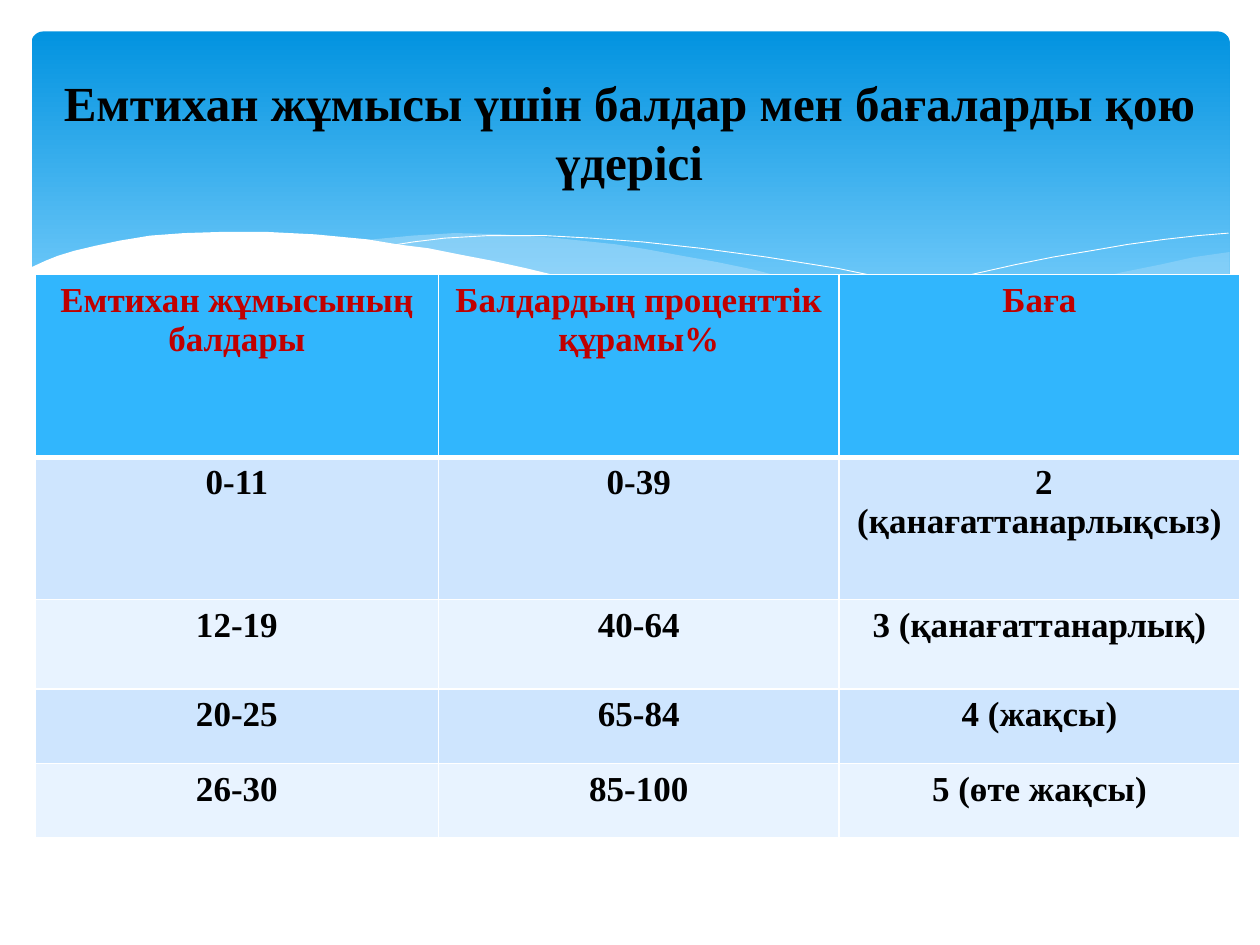
from lxml import etree
from pptx import Presentation
from pptx.dml.color import RGBColor
from pptx.enum.shapes import MSO_SHAPE
from pptx.enum.text import MSO_ANCHOR, PP_ALIGN
from pptx.oxml.ns import qn
from pptx.util import Inches, Pt

ROUNDED = MSO_SHAPE.ROUNDED_RECTANGLE
CENTER = PP_ALIGN.CENTER
MIDDLE = MSO_ANCHOR.MIDDLE

THEME = {
    "font": "Times New Roman",
    "title_size": 28,
    "table_size": 20,
    "text": "000000",
    "header_text": "C00000",
    "header_fill": "31B6FD",
    "bands": ("CEE5FE", "E8F3FF"),
    "banner": (("0293E0", 0), ("83D3FE", 0.9)),
    "wave": "C6E7FC",
    "white": "FFFFFF",
}

TITLE = "Емтихан жұмысы үшін балдар мен бағаларды қою үдерісі"
GRADES = [
    ("Емтихан жұмысының балдары", "Балдардың проценттік құрамы%", "Баға"),
    ("0-11", "0-39", " 2 (қанағаттанарлықсыз)"),
    ("12-19", "40-64", "3 (қанағаттанарлық)"),
    ("20-25", "65-84", "4 (жақсы)"),
    ("26-30", "85-100", "5 (өте жақсы)"),
]
COLUMN_WIDTHS = (3.2, 3.18, 3.18)
ROW_HEIGHTS = (1.45, 1.13, 0.71, 0.59, 0.59)

RIGHT_WAVE = [
    (9.76, 2), (9.48, 2.04), (9.21, 2.1), (8.91, 2.16), (8.61, 2.23), (8.05, 2.37),
    (7.53, 2.48), (7.06, 2.57), (6.61, 2.65), (6.91, 2.69), (7.19, 2.72), (7.45, 2.75),
    (7.69, 2.77), (8.03, 2.78), (8.35, 2.77), (8.63, 2.75), (8.89, 2.72), (9.13, 2.67),
    (9.35, 2.62), (9.63, 2.52), (9.76, 2.47),
]
MIDDLE_WAVE = [
    (8.93, 2.73), (8.66, 2.69), (8.07, 2.6), (7.41, 2.47), (6.68, 2.31), (6.29, 2.22),
    (5.98, 2.14), (5.69, 2.08), (5.41, 2.03), (5.14, 1.98), (4.89, 1.94), (4.42, 1.89),
    (3.99, 1.86), (3.61, 1.85), (3.28, 1.87), (2.86, 1.91), (3.23, 1.96), (3.62, 2.03),
    (4.04, 2.11), (4.49, 2.22), (4.91, 2.32), (5.66, 2.48), (6.34, 2.61), (6.95, 2.7),
    (7.48, 2.76), (7.96, 2.78), (8.38, 2.78), (8.67, 2.76),
]
LEFT_CREST = [
    (3.09, 1.95), (3.28, 1.92), (3.53, 1.89), (3.87, 1.87), (4.33, 1.87), (4.69, 1.89),
    (5.1, 1.92), (5.56, 1.97), (6.08, 2.04), (6.65, 2.13), (7.27, 2.26), (7.95, 2.41),
    (8.69, 2.61), (9.07, 2.72),
]
RIGHT_CREST = [
    (6.13, 2.57), (6.53, 2.46), (6.95, 2.35), (7.48, 2.23), (8.06, 2.1), (8.36, 2.04),
    (8.66, 1.99), (8.95, 1.94), (9.24, 1.9), (9.51, 1.87), (9.75, 1.85),
]
FRONT_WAVE = [
    (9.77, 2.46), (9.5, 2.56), (9.2, 2.65), (8.87, 2.71), (8.5, 2.75), (8.09, 2.77),
    (7.61, 2.75), (7.08, 2.7), (6.48, 2.62), (5.79, 2.5), (5.03, 2.33), (4.47, 2.2),
    (4.18, 2.13), (3.91, 2.07), (3.65, 2.02), (3.4, 1.97), (3.16, 1.94), (2.92, 1.9),
    (2.71, 1.88), (2.5, 1.86), (2.11, 1.84), (1.77, 1.84), (1.46, 1.85), (1.19, 1.87),
    (0.95, 1.91), (0.76, 1.95), (0.59, 1.99), (0.46, 2.03), (0.36, 2.07), (0.23, 2.13),
    (0.23, 3.29), (9.77, 3.29),
]


def color(name):
    return RGBColor.from_string(name)


def write(frame, text, size, ink):
    frame.word_wrap = True
    paragraph = frame.paragraphs[0]
    paragraph.alignment = CENTER
    run = paragraph.add_run()
    run.text = text
    run.font.name = THEME["font"]
    run.font.size = Pt(size)
    run.font.bold = True
    run.font.color.rgb = color(ink)


def add_banner(slide):
    banner = slide.shapes.add_shape(
        ROUNDED, Inches(0.25), Inches(0.25), Inches(9.51), Inches(2.7))
    banner.adjustments[0] = 0.034
    banner.shadow.inherit = False
    banner.line.fill.background()
    banner.fill.gradient()
    banner.fill.gradient_angle = 270
    for stop, (shade, position) in zip(banner.fill.gradient_stops, THEME["banner"]):
        stop.color.rgb = color(shade)
        stop.position = position


def add_curve(slide, points, closed):
    corners = [(Inches(x), Inches(y)) for x, y in points]
    builder = slide.shapes.build_freeform(*corners[0])
    builder.add_line_segments(corners[1:], close=closed)
    curve = builder.convert_to_shape()
    curve.shadow.inherit = False
    return curve


def add_wave(slide, points, shade, opacity=100):
    wave = add_curve(slide, points, True)
    wave.line.fill.background()
    wave.fill.solid()
    wave.fill.fore_color.rgb = color(shade)
    if opacity < 100:
        tint = wave.fill._xPr.find(".//" + qn("a:srgbClr"))
        etree.SubElement(tint, qn("a:alpha"), val=str(opacity * 1000))


def add_crest(slide, points):
    crest = add_curve(slide, points, False)
    crest.fill.background()
    crest.line.color.rgb = color(THEME["white"])
    crest.line.width = Pt(0.5)


def add_borders(cell, widths):
    properties = cell._tc.get_or_add_tcPr()
    for side, width in widths.items():
        border = etree.SubElement(properties, qn("a:ln" + side), w=str(Pt(width)))
        fill = etree.SubElement(border, qn("a:solidFill"))
        etree.SubElement(fill, qn("a:srgbClr"), val=THEME["white"])


def add_grades(slide):
    grades = slide.shapes.add_table(
        len(GRADES), len(COLUMN_WIDTHS), Inches(0.28), Inches(2.18),
        Inches(sum(COLUMN_WIDTHS)), Inches(sum(ROW_HEIGHTS))).table
    for column, width in zip(grades.columns, COLUMN_WIDTHS):
        column.width = Inches(width)
    for index, (row, height) in enumerate(zip(grades.rows, ROW_HEIGHTS)):
        row.height = Inches(height)
        header = index == 0
        fill = THEME["header_fill"] if header else THEME["bands"][(index - 1) % 2]
        ink = THEME["header_text"] if header else THEME["text"]
        borders = {"L": 1, "R": 1, "T": 3 if index == 1 else 1, "B": 3 if header else 1}
        for cell, text in zip(row.cells, GRADES[index]):
            add_borders(cell, borders)
            cell.fill.solid()
            cell.fill.fore_color.rgb = color(fill)
            write(cell.text_frame, text, THEME["table_size"], ink)


def main():
    """Build the slide of exam points and grades."""
    deck = Presentation()
    deck.slide_width, deck.slide_height = Inches(10), Inches(7.5)
    slide = deck.slides.add_slide(deck.slide_layouts[6])
    add_banner(slide)
    add_wave(slide, RIGHT_WAVE, THEME["wave"], 29)
    add_wave(slide, MIDDLE_WAVE, THEME["wave"], 40)
    add_crest(slide, LEFT_CREST)
    add_crest(slide, RIGHT_CREST)
    add_wave(slide, FRONT_WAVE, THEME["white"])
    title = slide.shapes.add_textbox(
        Inches(0.35), Inches(0.52), Inches(9.29), Inches(1.04)).text_frame
    title.vertical_anchor = MIDDLE
    write(title, TITLE, THEME["title_size"], THEME["text"])
    add_grades(slide)
    deck.save("out.pptx")


if __name__ == "__main__":
    main()
